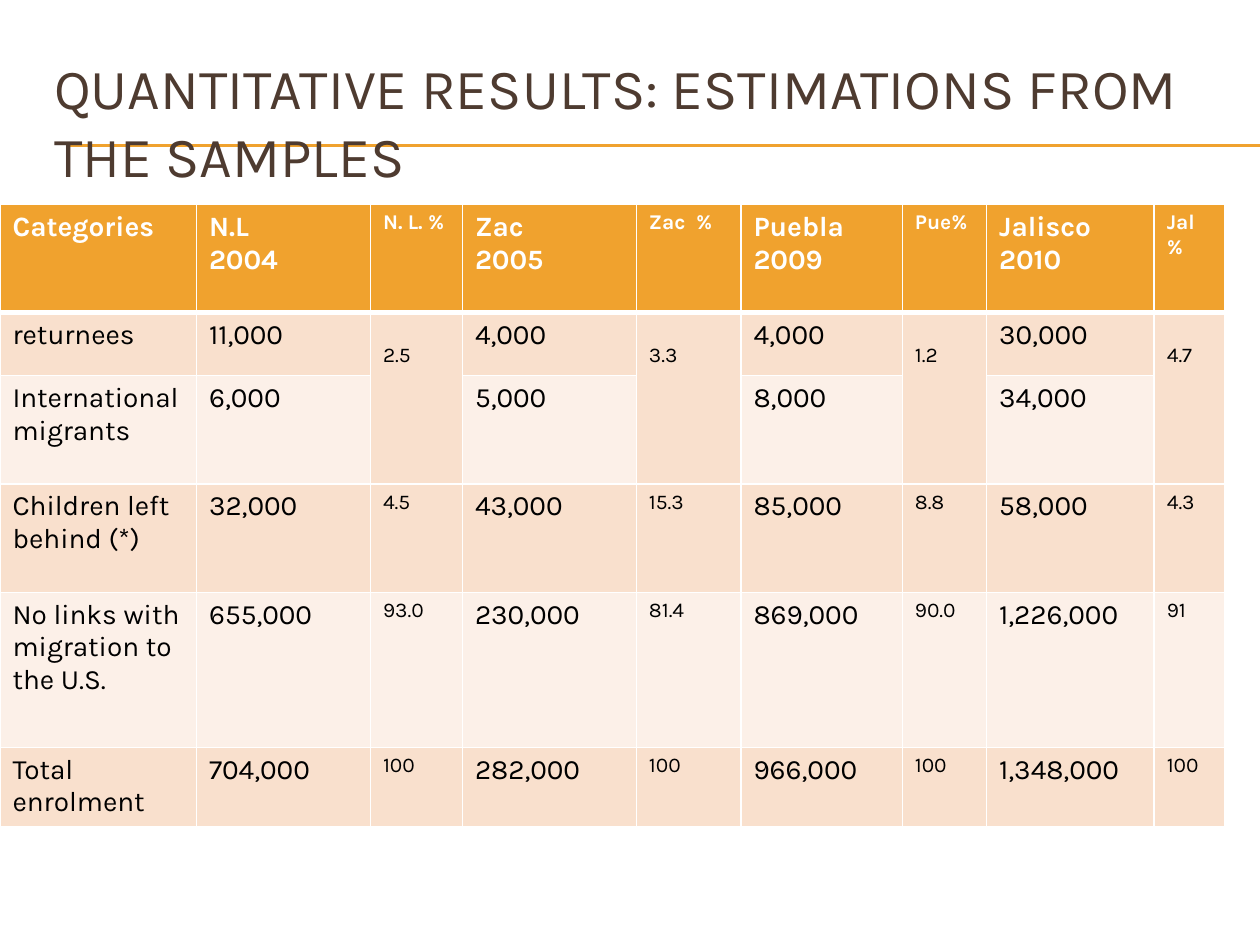
from lxml import etree
from pptx import Presentation
from pptx import util as u
from pptx.dml import color
from pptx.enum import shapes, text
from pptx.oxml import ns

FONT = "Karla"
GOLD, WHITE = "F0A22E", "FFFFFF"
BANDS = ["F9E0CD", "FCF0E8"]
COLS = [112.3, 99.4, 52.6, 99.4, 59.8, 92.2, 48.2, 95.8, 40.3]
ROWS = [61.9, 36, 61.9, 61.9, 88.6, 44.4]
DATA = [
    ["Categories", "N.L\n2004", "N. L. %", "Zac\n2005", "Zac  %",
     "Puebla 2009", "Pue%", "Jalisco 2010", "Jal\n%"],
    ["returnees", "11,000", "2.5", "4,000", "3.3", "4,000", "1.2", "30,000", "4.7"],
    ["International migrants", "6,000", "", "5,000", "", "8,000", "", "34,000", ""],
    ["Children left behind (*)", "32,000", "4.5", "43,000", "15.3",
     "85,000", "8.8", "58,000", "4.3"],
    ["No links with migration to the U.S.", "655,000", "93.0", "230,000", "81.4",
     "869,000", "90.0", "1,226,000", "91"],
    ["Total enrolment", "704,000", "100", "282,000", "100",
     "966,000", "100", "1,348,000", "100"],
]


def rgb(code):
    return color.RGBColor.from_string(code)


def write(frame, words, size=16, tint="000000", bold=False):
    frame.word_wrap = True
    for i, line in enumerate(words.split("\n")):
        para = frame.paragraphs[0] if i == 0 else frame.add_paragraph()
        run = para.add_run()
        run.text = line
        run.font.name = FONT
        run.font.size = u.Pt(size)
        run.font.bold = bold
        run.font.color.rgb = rgb(tint)


def rule(slide, y):
    line = slide.shapes.add_connector(
        shapes.MSO_CONNECTOR.STRAIGHT, u.Pt(40.3), u.Pt(y), u.Pt(720), u.Pt(y))
    line.line.color.rgb = rgb(GOLD)
    line.line.width = u.Pt(0.75)
    etree.SubElement(line._element.spPr, ns.qn("a:effectLst"))


def title(slide, words):
    box = slide.shapes.add_textbox(u.Pt(23.8), u.Pt(36), u.Pt(684), u.Pt(66.2))
    box.text_frame.vertical_anchor = text.MSO_ANCHOR.MIDDLE
    write(box.text_frame, words, size=32.4, tint="4E3B30")


def border(cell, **widths):
    props = cell._tc.get_or_add_tcPr()
    for i, side in enumerate("LRTB"):
        line = etree.Element(ns.qn("a:ln" + side), w=str(u.Pt(widths.get(side, 1))))
        fill = etree.SubElement(line, ns.qn("a:solidFill"))
        etree.SubElement(fill, ns.qn("a:srgbClr"), val=WHITE)
        props.insert(i, line)


def grid(slide):
    table = slide.shapes.add_table(
        len(ROWS), len(COLS), 0, u.Pt(116.8), u.Pt(sum(COLS)), u.Pt(sum(ROWS))).table
    for col, width in zip(table.columns, COLS):
        col.width = u.Pt(width)
    for row, height in zip(table.rows, ROWS):
        row.height = u.Pt(height)
    for r, line in enumerate(DATA):
        head = r == 0
        for c, words in enumerate(line):
            cell = table.cell(r, c)
            share = c > 0 and c % 2 == 0
            cell.fill.solid()
            cell.fill.fore_color.rgb = rgb(GOLD if head else BANDS[(r - 1) % 2])
            border(cell, B=3 if head else 1, T=3 if r == 1 else 1)
            if words:
                write(cell.text_frame, words, size=12 if share else 16,
                      tint=WHITE if head else "000000", bold=head)
            if share and r == 1:
                cell.margin_top = u.Pt(17.6)
    for c in range(2, len(COLS), 2):
        table.cell(1, c).merge(table.cell(2, c))


def main():
    deck = Presentation()
    deck.slide_width, deck.slide_height = u.Pt(720), u.Pt(540)
    slide = deck.slides.add_slide(deck.slide_layouts[6])
    for y in (82.8, 83.5):
        rule(slide, y)
    title(slide, "QUANTITATIVE RESULTS: ESTIMATIONS FROM THE SAMPLES")
    grid(slide)
    deck.save("out.pptx")


if __name__ == "__main__":
    main()
